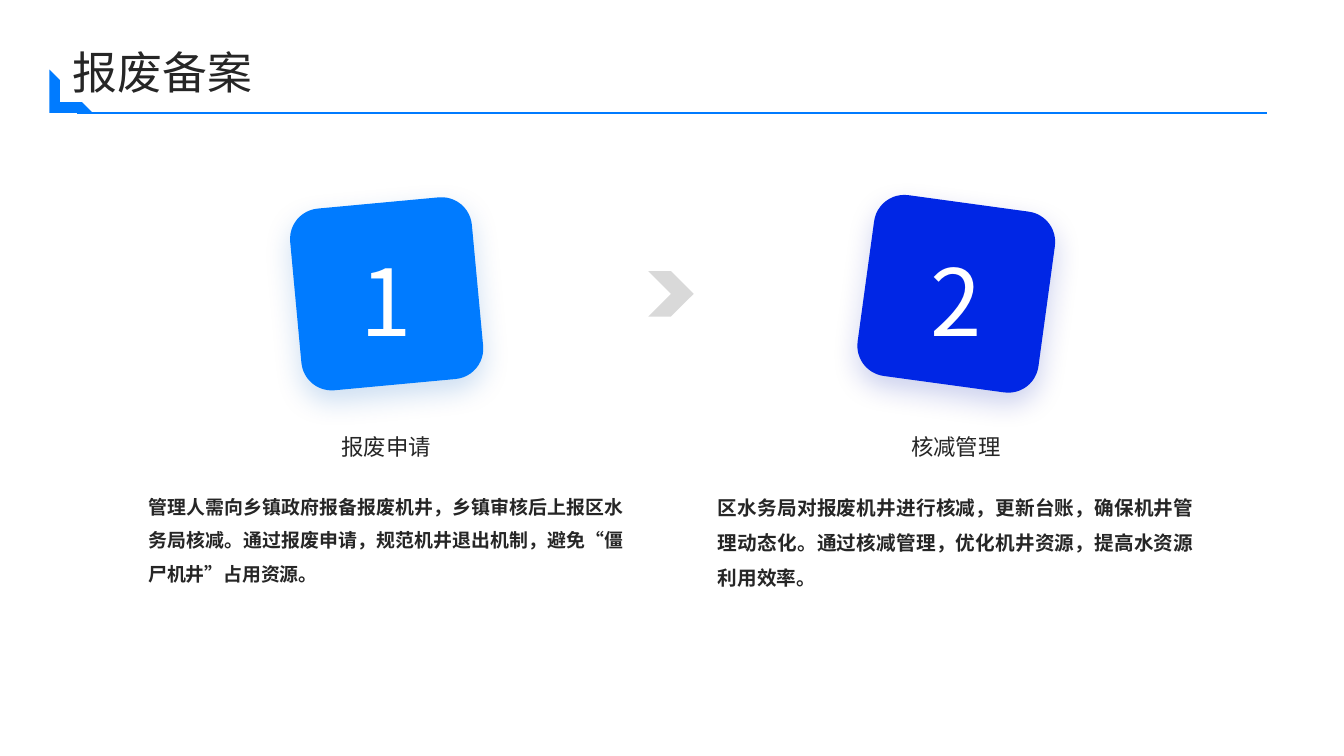
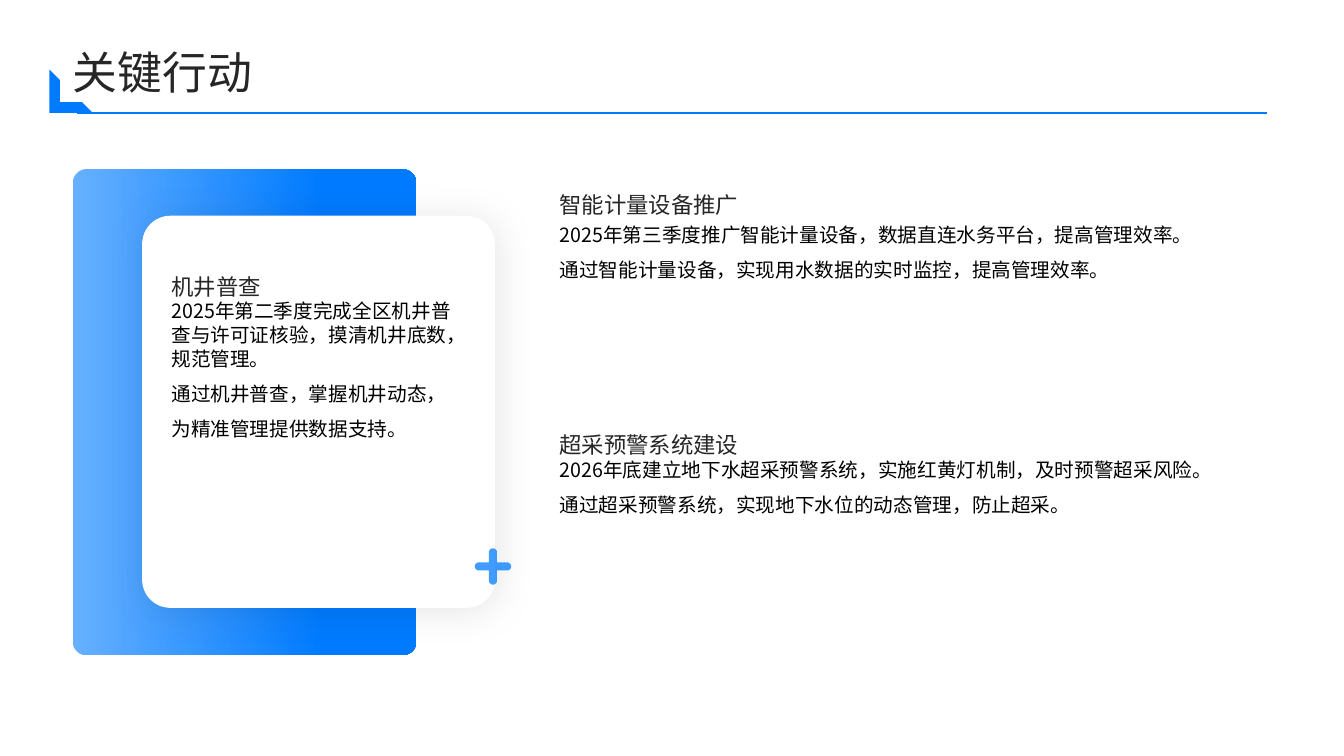
import math
from dataclasses import dataclass

from lxml import etree
from pptx import Presentation
from pptx.dml.color import RGBColor
from pptx.enum.shapes import MSO_CONNECTOR, MSO_SHAPE
from pptx.enum.text import MSO_ANCHOR, PP_ALIGN
from pptx.oxml.ns import qn
from pptx.util import Pt

PX = 9144  # EMU per px, 100 px to the inch
ROUND = MSO_SHAPE.ROUNDED_RECTANGLE
FRAME = MSO_SHAPE.HALF_FRAME
ARROW = MSO_SHAPE.CHEVRON
LINE = MSO_CONNECTOR.STRAIGHT
TOP, MID, LOW = MSO_ANCHOR.TOP, MSO_ANCHOR.MIDDLE, MSO_ANCHOR.BOTTOM
LEFT, CENTER, FULL = PP_ALIGN.LEFT, PP_ALIGN.CENTER, PP_ALIGN.JUSTIFY


@dataclass(frozen=True)
class Theme:
    font: str = "Noto Sans CJK SC"
    blue: str = "007BFF"
    sky: str = "66B0FF"
    navy: str = "0026E5"
    gray: str = "D9D9D9"
    ink: str = "262626"
    black: str = "000000"
    white: str = "FFFFFF"
    shade: str = "005CBF"
    dusk: str = "001CAC"
    title: float = 32
    head: float = 16
    body: float = 14
    small: float = 13.5
    digit: float = 66


class Deck:
    def __init__(self, theme):
        self.theme = theme
        self.prs = Presentation()
        self.prs.slide_width = 1333 * PX
        self.prs.slide_height = 750 * PX
        self.slide = None

    def page(self, title):
        """Start a slide with its title, corner mark and rule."""
        t = self.theme
        self.slide = self.prs.slides.add_slide(self.prs.slide_layouts[6])
        self.text((72, 43, 1188, 51), [title], t.title, space=1.1, anchor=MID)
        self.shape(FRAME, (49, 69, 43, 43), t.blue, turn=270, adj=(0.24, 0.25))
        self.rule(76, 112, 1257)

    def rule(self, x, y, end):
        line = self.slide.shapes.add_connector(
            LINE, x * PX, y * PX, end * PX, y * PX)
        line.line.color.rgb = RGBColor.from_string(self.theme.blue)
        line.line.width = Pt(1)
        etree.SubElement(line._element.spPr, qn("a:effectLst"))

    def text(self, box, lines, size, color=None, space=1.5, first=None,
             align=LEFT, anchor=TOP, bold=False):
        """Add text; first is the line spacing of the opening paragraph."""
        area = self.slide.shapes.add_textbox(*(n * PX for n in box))
        frame = area.text_frame
        frame.word_wrap = True
        frame.vertical_anchor = anchor
        frame.margin_left = frame.margin_right = 0
        frame.margin_top = frame.margin_bottom = 0
        frame.text = "\n".join(lines)
        for i, para in enumerate(frame.paragraphs):
            para.alignment = align
            para.line_spacing = first if first and i == 0 else space
            font = para.font
            font.size = Pt(size)
            font.bold = bold
            font.color.rgb = RGBColor.from_string(color or self.theme.ink)
            font.name = self.theme.font
            east = etree.SubElement(font._element, qn("a:ea"))
            east.set("typeface", self.theme.font)

    def paint(self, item, color):
        item.shadow.inherit = False
        item.line.fill.background()
        item.fill.solid()
        item.fill.fore_color.rgb = RGBColor.from_string(color)

    def shape(self, kind, box, color, turn=0, adj=()):
        item = self.slide.shapes.add_shape(kind, *(n * PX for n in box))
        self.paint(item, color)
        item.rotation = turn
        for i, value in enumerate(adj):
            item.adjustments[i] = value
        return item

    def blend(self, item, stops):
        """Fill a shape with a left-to-right gradient."""
        item.fill.gradient()
        item.fill.gradient_angle = 0
        for stop, (place, color) in zip(item.fill.gradient_stops, stops):
            stop.position = place
            stop.color.rgb = RGBColor.from_string(color)

    def shadow(self, item, color, alpha, blur, dist, angle):
        effects = item._element.spPr.find(qn("a:effectLst"))
        outer = etree.SubElement(
            effects, qn("a:outerShdw"), blurRad=str(Pt(blur)),
            dist=str(Pt(dist)), dir=str(angle * 60000), algn="ctr",
            rotWithShape="0")
        tone = etree.SubElement(outer, qn("a:srgbClr"), val=color)
        etree.SubElement(tone, qn("a:alpha"), val=str(alpha * 1000))

    def plus(self, x, y, reach, half, color, alpha):
        """Add a round-ended plus sign centred on x, y."""
        points = []
        for arm in range(4):
            turn = arm * math.pi / 2
            cos, sin = math.cos(turn), math.sin(turn)
            local = [(reach - half + half * math.cos(math.radians(a)),
                      half * math.sin(math.radians(a)))
                     for a in range(-90, 91, 15)]
            local.append((half, half))
            points += [(round(10 * (x + u * cos - v * sin)),
                        round(10 * (y + u * sin + v * cos)))
                       for u, v in local]
        pen = self.slide.shapes.build_freeform(*points[0], scale=PX / 10)
        pen.add_line_segments(points[1:], close=True)
        item = pen.convert_to_shape()
        self.paint(item, color)
        tone = item._element.spPr.find(qn("a:solidFill"))[0]
        etree.SubElement(tone, qn("a:alpha"), val=str(alpha * 1000))


def retire(deck):
    t = deck.theme
    deck.page("报废备案")
    steps = [
        ("报废申请", "管理人需向乡镇政府报备报废机井，乡镇审核后上报区水务局核减。"
         "通过报废申请，规范机井退出机制，避免“僵尸机井”占用资源。",
         t.small, t.blue, t.shade, -5.3),
        ("核减管理", "区水务局对报废机井进行核减，更新台账，确保机井管理动态化。"
         "通过核减管理，优化机井资源，提高水资源利用效率。",
         t.body, t.navy, t.dusk, 7.8),
    ]
    # Numbered tile, heading and text for each step
    for i, (head, body, size, color, shade, turn) in enumerate(steps):
        x = 147 + 565 * i
        tile = deck.shape(ROUND, (x + 146, 201, 181, 181), color, turn)
        deck.shadow(tile, shade, 20, 20, 8, 90)
        deck.text((x + 173, 226, 126, 131), [str(i + 1)], t.digit, t.white,
                  space=1.1, align=CENTER, anchor=MID)
        deck.text((x, 427, 472, 37), [head], t.head, space=1.1, align=CENTER)
        deck.text((x, 480, 472, 113), [body], size, align=FULL, bold=True)
    deck.shape(ARROW, (643, 269, 45, 45), t.gray)


def action(deck):
    t = deck.theme
    deck.page("关键行动")
    # Survey card over a gradient panel
    panel = deck.shape(ROUND, (72, 168, 341, 482), t.blue, adj=(0.04,))
    deck.blend(panel, [(0, t.sky), (0.73, t.blue)])
    card = deck.shape(ROUND, (141, 214, 350, 389), t.white, adj=(0.08,))
    deck.shadow(card, t.black, 10, 28, 3, 45)
    deck.plus(489, 562, 18, 4, t.blue, 75)
    # Heading box, anchor and body box of each action
    parts = [
        ((170, 230, 291, 68), LOW, (170, 297, 291, 264), "机井普查",
         ["2025年第二季度完成全区机井普查与许可证核验，摸清机井底数，规范管理。",
          "通过机井普查，掌握机井动态，为精准管理提供数据支持。"]),
        ((555, 183, 675, 27), MID, (555, 221, 675, 176), "智能计量设备推广",
         ["2025年第三季度推广智能计量设备，数据直连水务平台，提高管理效率。",
          "通过智能计量设备，实现用水数据的实时监控，提高管理效率。"]),
        ((555, 421, 675, 27), MID, (555, 454, 675, 176), "超采预警系统建设",
         ["2026年底建立地下水超采预警系统，实施红黄灯机制，及时预警超采风险。",
          "通过超采预警系统，实现地下水位的动态管理，防止超采。"]),
    ]
    for top, anchor, area, head, body in parts:
        deck.text(top, [head], t.head, anchor=anchor)
        deck.text(area, body, t.body, t.black, first=1.0)


def main():
    deck = Deck(Theme())
    retire(deck)
    action(deck)
    deck.prs.save("out.pptx")


if __name__ == "__main__":
    main()
